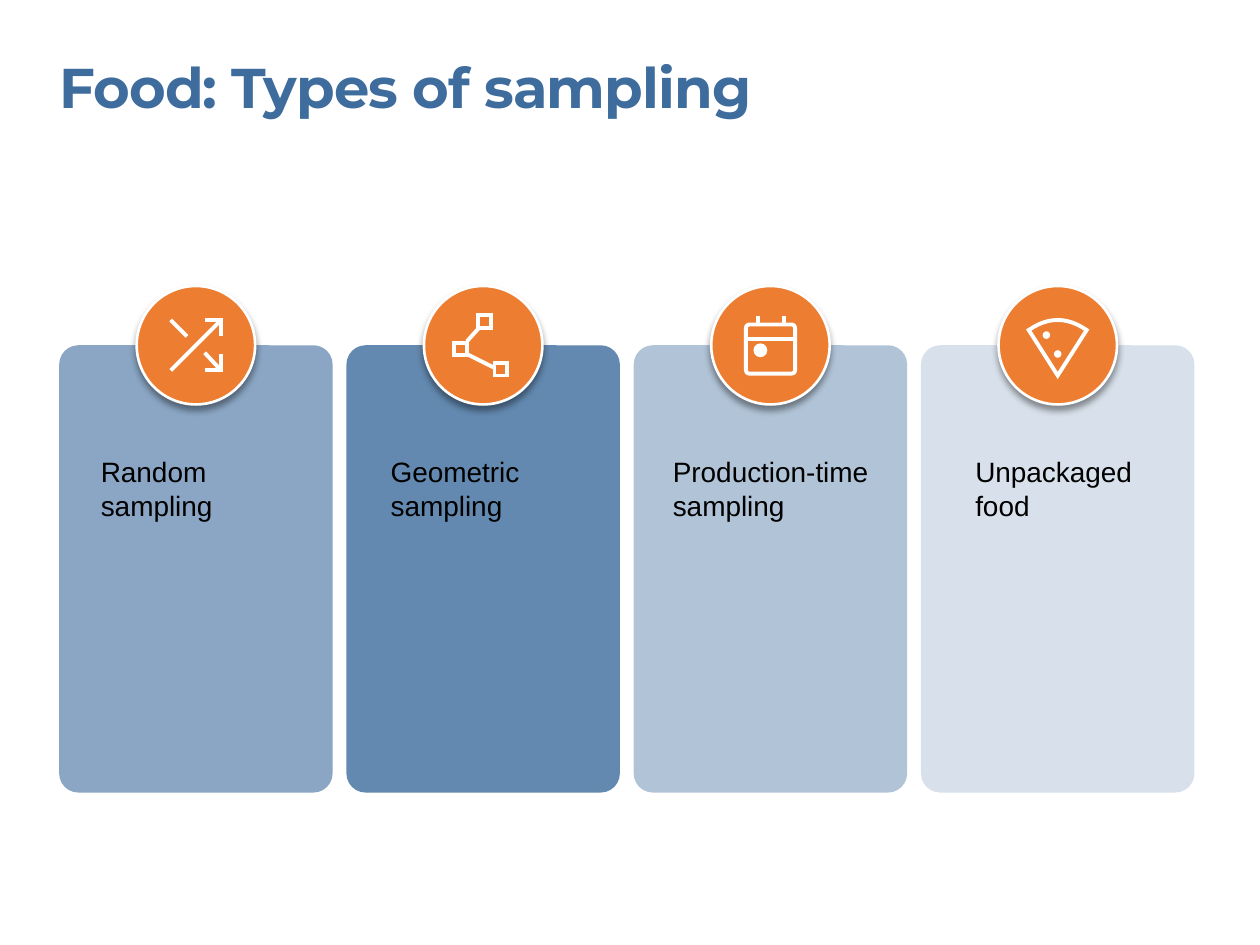
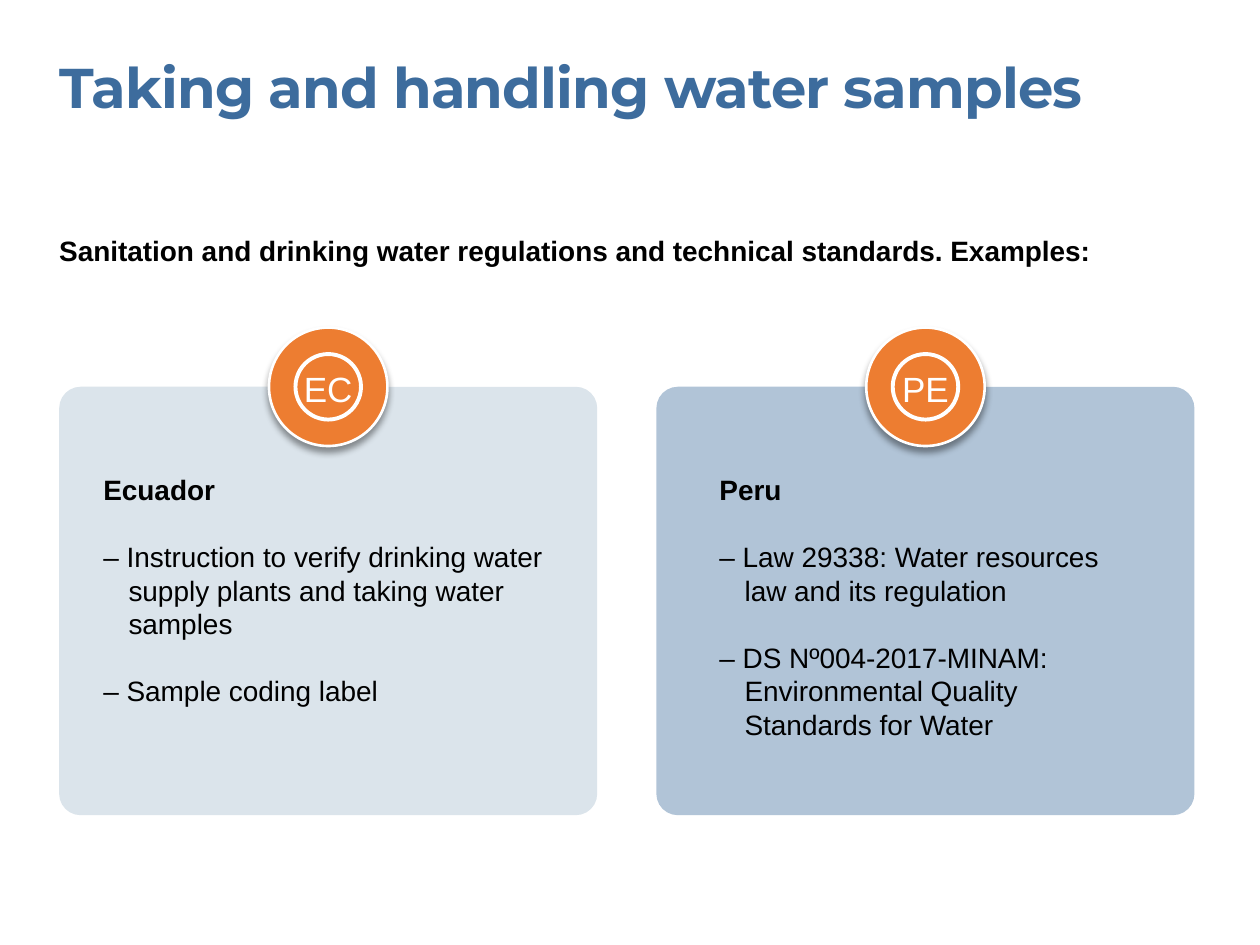
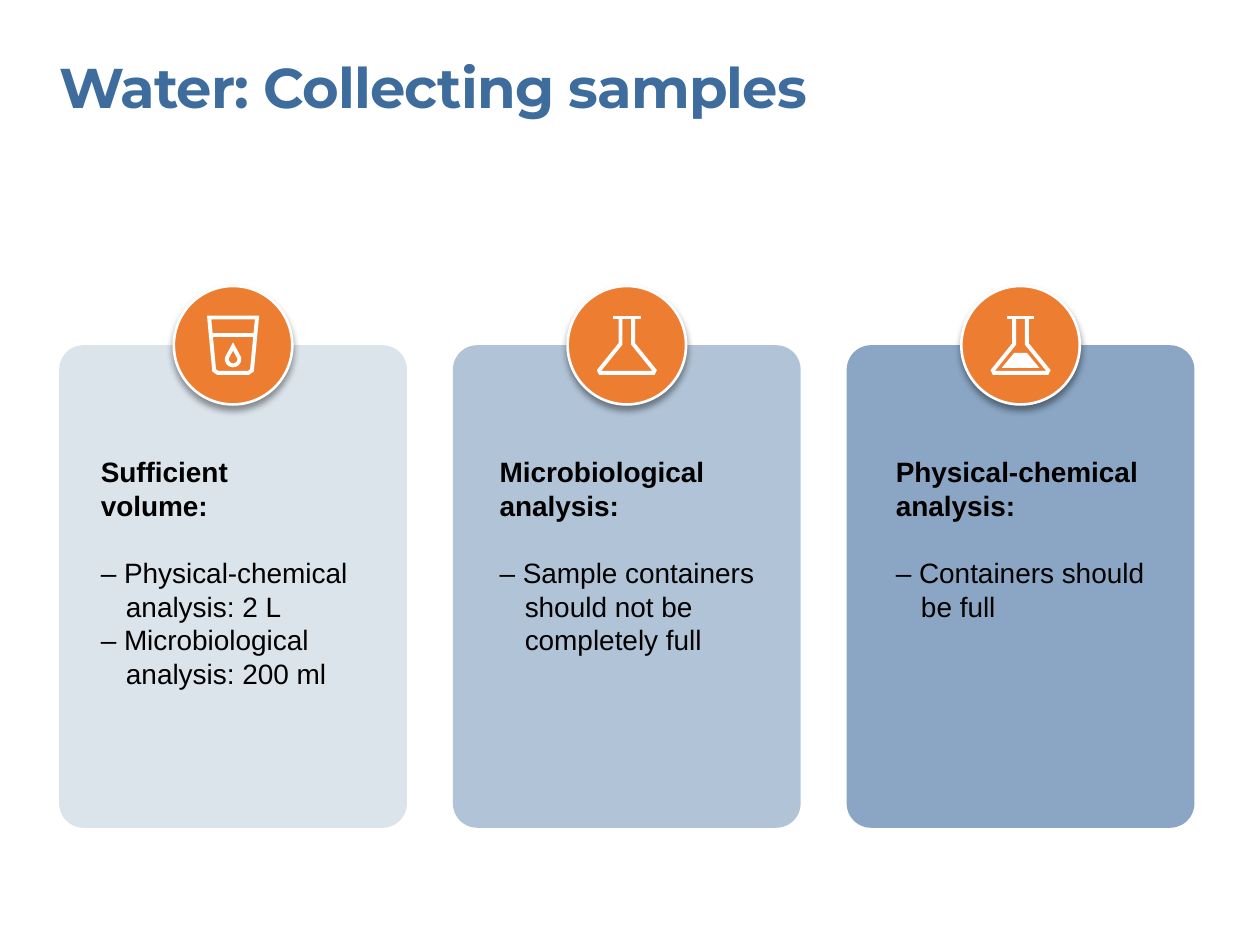
import math

import pptx
import pptx.dml.color
import pptx.enum.shapes
import pptx.enum.text
import pptx.oxml.ns
import pptx.util
from lxml import etree

Inches, Pt = pptx.util.Inches, pptx.util.Pt
RGBColor = pptx.dml.color.RGBColor
Shape = pptx.enum.shapes.MSO_SHAPE
Text = pptx.enum.text
qn = pptx.oxml.ns.qn

BLUE = RGBColor(0x3D, 0x6C, 0x9D)
PALE = RGBColor(0xDB, 0xE4, 0xEB)
ORANGE = RGBColor(0xED, 0x7D, 0x31)
WHITE = RGBColor(0xFF, 0xFF, 0xFF)
BLACK = RGBColor(0, 0, 0)

LEFT, SPAN = 0.47, 9.01  # shared margin and content width
DISC = 0.94
LINE = Pt(19.2)  # body line pitch
STROKE = Pt(2.25)


def add_node(parent, tag, **attrs):
    return etree.SubElement(parent, qn(tag), {k: str(v) for k, v in attrs.items()})


def add_shape(slide, kind, x, y, w, h, fill=None):
    shape = slide.shapes.add_shape(kind, Inches(x), Inches(y), Inches(w), Inches(h))
    shape.shadow.inherit = False
    if fill is None:
        shape.fill.background()
    else:
        shape.fill.solid()
        shape.fill.fore_color.rgb = fill
    shape.line.fill.background()
    return shape


def add_text(slide, x, y, w, h):
    box = slide.shapes.add_textbox(Inches(x), Inches(y), Inches(w), Inches(h))
    frame = box.text_frame
    frame.margin_left = frame.margin_right = 0
    frame.margin_top = frame.margin_bottom = 0
    frame.word_wrap = True
    frame.auto_size = Text.MSO_AUTO_SIZE.SHAPE_TO_FIT_TEXT
    return frame


def style(par, size, color, bold=False, name="Arial"):
    font = par.font
    font.size, font.bold, font.name = Pt(size), bold, name
    font.color.rgb = color


def add_title(slide, text):
    par = add_text(slide, LEFT, 0.42, 8.55, 0.54).paragraphs[0]
    run = par.add_run()
    run.text = text
    style(par, 32, BLUE, True, "Montserrat")
    run._r.get_or_add_rPr().set("spc", "-50")


def add_body(slide, box, heads, items=(), bold=True, apart=False):
    """Heading lines, then hanging items after a one-line gap."""
    frame = add_text(slide, *box)
    for i, text in enumerate([*heads, *items]):
        par = frame.paragraphs[0] if i == 0 else frame.add_paragraph()
        par.text = text
        par.line_spacing = LINE
        nth = i - len(heads)
        style(par, 16, BLACK, bold and nth < 0)
        if nth >= 0:
            props = par._p.get_or_add_pPr()
            props.set("marL", str(Inches(0.2)))
            props.set("indent", str(-Inches(0.2)))
            if nth == 0 or apart:
                par.space_before = LINE


class Pen:
    """Draws white icon parts around a centre point."""

    def __init__(self, slide, x, y):
        self.slide, self.x, self.y = slide, x, y

    def ink(self, line):
        line.color.rgb = WHITE
        line.width = STROKE

    def trace(self, *parts, solid=False):
        """One outline of several parts; a part ending where it began is closed."""
        form = None
        for part in parts:
            spots = [(Inches(self.x + x), Inches(self.y + y)) for x, y in part]
            if form is None:
                form = self.slide.shapes.build_freeform(*spots[0])
            else:
                form.move_to(*spots[0])
            form.add_line_segments(spots[1:], close=part[0] == part[-1])
        shape = form.convert_to_shape()
        shape.shadow.inherit = False
        if solid:
            shape.fill.solid()
            shape.fill.fore_color.rgb = WHITE
            shape.line.fill.background()
        else:
            shape.fill.background()
            self.ink(shape.line)
            add_node(shape.line._get_or_add_ln(), "a:miter", lim=800000)

    def frame(self, kind, x, y, w, h):
        shape = add_shape(self.slide, kind, self.x + x - w / 2, self.y + y - h / 2, w, h)
        self.ink(shape.line)
        return shape

    def dot(self, x, y, size):
        add_shape(self.slide, Shape.OVAL, self.x + x - size / 2, self.y + y - size / 2,
                  size, size, WHITE)


def mirror(half):
    return half + [(-x, y) for x, y in reversed(half)]


# Icons
def draw_mix(pen):
    heads = [[(0.07, y), (0.2, y), (0.2, y * 0.35)] for y in (-0.2, 0.2)]
    pen.trace([(-0.2, 0.2), (0.2, -0.2)], [(-0.2, -0.2), (-0.07, -0.07)],
              [(0.07, 0.06), (0.2, 0.2)], *heads)


def draw_nodes(pen):
    r = 0.05
    nodes = [[(x - r, y - r), (x + r, y - r), (x + r, y + r), (x - r, y + r), (x - r, y - r)]
             for x, y in ((0.01, -0.19), (-0.18, 0.03), (0.14, 0.19))]
    pen.trace([(-0.04, -0.13), (-0.13, -0.03)], [(-0.13, 0.07), (0.09, 0.18)], *nodes)


def draw_date(pen):
    pen.frame(Shape.ROUNDED_RECTANGLE, 0, 0.03, 0.39, 0.39).adjustments[0] = 0.07
    pegs = [[(x, -0.23), (x, -0.16)] for x in (-0.1, 0.11)]
    pen.trace([(-0.19, -0.05), (0.19, -0.05)], *pegs)
    pen.dot(-0.08, 0.04, 0.11)


def draw_slice(pen):
    rim = [(0.23 * t / 6, -0.2 + 0.08 * (t / 6) ** 2) for t in range(-6, 7)]
    pen.trace([(0, 0.24), *rim, (0, 0.24)])
    pen.dot(-0.09, -0.08, 0.06)
    pen.dot(0, 0.07, 0.06)


def draw_glass(pen):
    cup = mirror([(0.19, -0.22), (0.15, 0.2), (0.12, 0.22)])
    turns = [math.radians(a) for a in range(-10, 191, 20)]
    bulb = [(0.05 * math.cos(a), 0.11 + 0.05 * math.sin(a)) for a in turns]
    pen.trace([*cup, cup[0]], [(-0.17, -0.08), (0.17, -0.08)],
              [(0, 0.01), *bulb, (0, 0.01)])


def draw_flask(pen):
    pen.trace(mirror([(0.05, -0.22), (0.05, -0.01), (0.22, 0.2), (0.21, 0.22)]),
              [(-0.11, -0.22), (0.11, -0.22)])


def draw_full(pen):
    draw_flask(pen)
    fluid = mirror([(0.15, 0.18), (0.05, 0.06)])
    pen.trace([*fluid, fluid[0]], solid=True)


def add_disc(slide, x, y, icon):
    """Orange disc centred on a point, holding a country code or an icon."""
    disc = add_shape(slide, Shape.OVAL, x - DISC / 2, y - DISC / 2, DISC, DISC, ORANGE)
    disc.line.color.rgb = WHITE
    disc.line.width = Pt(1.5)
    glow = add_node(disc._element.spPr.find(qn("a:effectLst")), "a:outerShdw",
                    blurRad=Pt(4), dist=Pt(3), dir=5400000, algn="ctr", rotWithShape=0)
    add_node(add_node(glow, "a:srgbClr", val=BLACK), "a:alpha", val=40000)
    pen = Pen(slide, x, y)
    if callable(icon):
        icon(pen)
        return
    frame = disc.text_frame
    frame.word_wrap = True
    frame.vertical_anchor = Text.MSO_ANCHOR.MIDDLE
    par = frame.paragraphs[0]
    par.text = icon
    par.alignment = Text.PP_ALIGN.CENTER
    par.line_spacing = 1.1
    style(par, 20, WHITE)
    pen.frame(Shape.OVAL, 0, 0, 0.52, 0.52)


def add_card(slide, x, y, w, h, curve, shade, icon):
    """Rounded panel; shade is the opacity of the blue, None the plain pale tone."""
    card = add_shape(slide, Shape.ROUNDED_RECTANGLE, x, y, w, h, BLUE if shade else PALE)
    card.adjustments[0] = curve
    if shade:
        tone = card._element.spPr.find(qn("a:solidFill"))[0]
        add_node(tone, "a:alpha", val=shade * 1000)
    add_disc(slide, x + w / 2, y, icon)


def add_cards(slide, top, w, h, curve, drop, cards, **looks):
    """Equal cards across the content width, text set drop below their top."""
    step = (SPAN - w) / (len(cards) - 1)
    for i, (shade, icon, inset, wide, tall, heads, items) in enumerate(cards):
        x = LEFT + i * step
        add_card(slide, x, top, w, h, curve, shade, icon)
        add_body(slide, (x + inset, top + drop, wide, tall), heads, items, **looks)


# Slides
def food_slide(slide):
    add_title(slide, "Food: Types of sampling")
    add_cards(slide, 2.74, 2.17, 3.55, 0.07, 0.87, [
        (60, draw_mix, 0.33, 1.48, 0.54, ["Random sampling"], []),
        (80, draw_nodes, 0.35, 1.62, 0.54, ["Geometric sampling"], []),
        (40, draw_date, 0.31, 1.83, 0.54, ["Production-time sampling"], []),
        (20, draw_slice, 0.43, 1.45, 0.54, ["Unpackaged food"], []),
    ], bold=False)


def rules_slide(slide):
    add_title(slide, "Taking and handling water samples")
    add_body(slide, (LEFT, 1.85, SPAN, 0.27),
             ["Sanitation and drinking water regulations and technical standards. Examples:"])
    add_cards(slide, 3.07, 4.27, 3.4, 0.05, 0.68, [
        (None, "EC", 0.35, 3.61, 1.88, ["Ecuador"],
         ["– Instruction to verify drinking water supply plants and taking water samples",
          "– Sample coding label"]),
        (40, "PE", 0.5, 3.31, 2.15, ["Peru"],
         ["– Law 29338: Water resources law and its regulation",
          "– DS Nº004-2017-MINAM: Environmental Quality Standards for Water"]),
    ], apart=True)


def water_slide(slide):
    add_title(slide, "Water: Collecting samples")
    add_cards(slide, 2.74, 2.76, 3.83, 0.07, 0.87, [
        (None, draw_glass, 0.33, 2.17, 1.88, ["Sufficient", "volume:"],
         ["– Physical-chemical analysis: 2 L", "– Microbiological analysis: 200 ml"]),
        (40, draw_flask, 0.37, 2.08, 1.62, ["Microbiological analysis:"],
         ["– Sample containers should not be completely full"]),
        (60, draw_full, 0.39, 2.13, 1.35, ["Physical-chemical analysis:"],
         ["– Containers should be full"]),
    ])


def main():
    deck = pptx.Presentation()
    deck.slide_width, deck.slide_height = Inches(10), Inches(7.5)
    for build in (food_slide, rules_slide, water_slide):
        build(deck.slides.add_slide(deck.slide_layouts[6]))
    deck.save("out.pptx")


if __name__ == "__main__":
    main()
